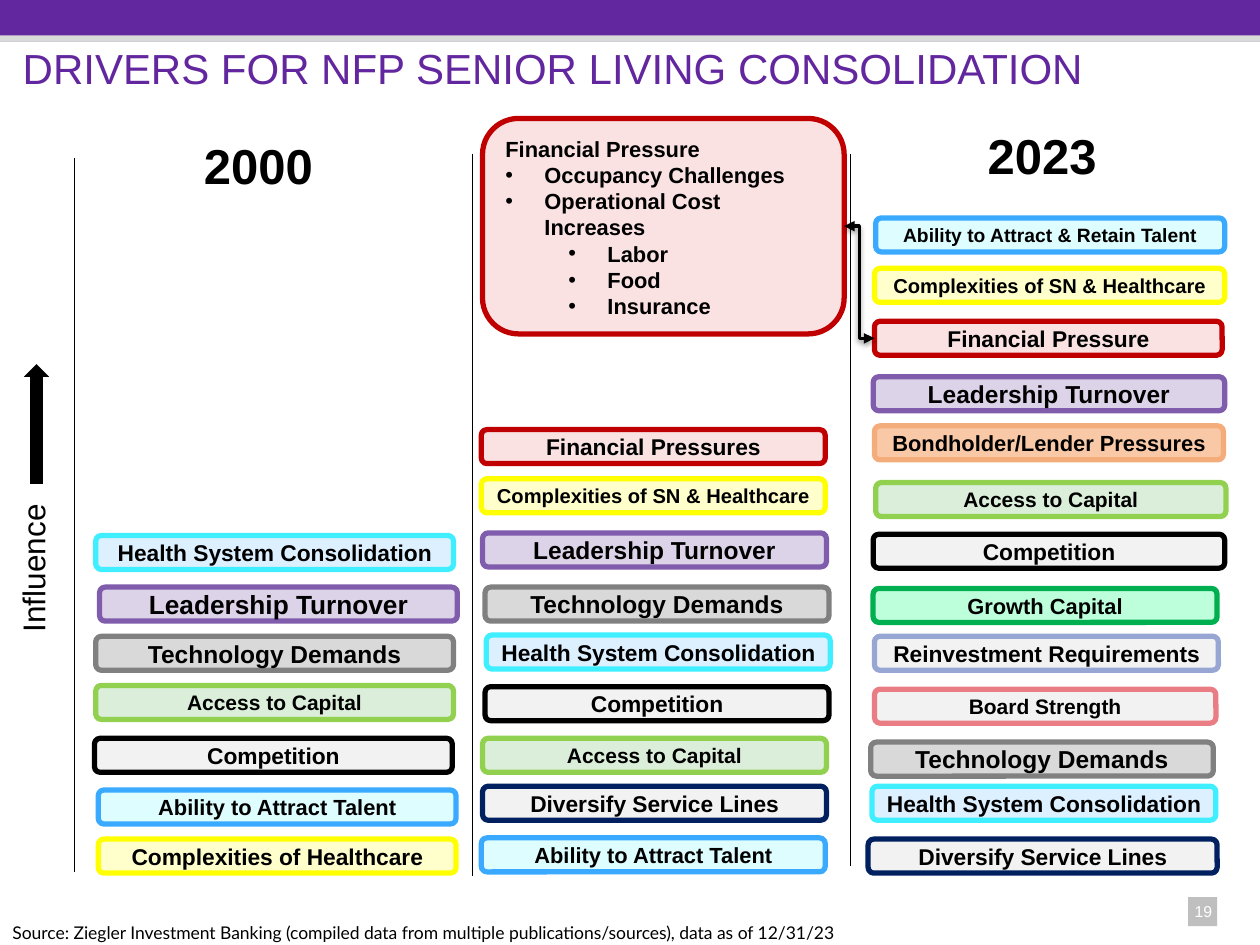
import pptx
import pptx.dml.color
import pptx.enum.shapes
import pptx.enum.text
import pptx.oxml
import pptx.oxml.ns
import pptx.oxml.xmlchemy
import pptx.util
from dataclasses import dataclass

Inches = pptx.util.Inches
Pt = pptx.util.Pt
SHAPE = pptx.enum.shapes.MSO_SHAPE
CONNECTOR = pptx.enum.shapes.MSO_CONNECTOR
ALIGN = pptx.enum.text.PP_ALIGN
ANCHOR = pptx.enum.text.MSO_ANCHOR


@dataclass(frozen=True)
class Theme:
    font: str = "Arial"
    source_font: str = "Lato"
    purple: str = "62269E"
    black: str = "000000"
    white: str = "FFFFFF"
    rule: str = "D9D9D9"
    badge: str = "BFBFBF"
    red_fill: str = "FAE2E3"
    red_line: str = "C00000"
    title: float = 24
    year: float = 28
    axis: float = 18
    callout: float = 12.5
    source: float = 10
    page: float = 9


THEME = Theme()

DRIVERS = {
    "Ability to Attract & Retain Talent": ("DDFDFF", "39AAFF", 11),
    "Ability to Attract Talent": ("DDFDFF", "39AAFF", 12.5),
    "Access to Capital": ("DAEEDA", "92D050", 12),
    "Board Strength": ("F2F2F2", "EA7D83", 12),
    "Bondholder/Lender Pressures": ("F8C8A7", "F4AC7B", 12.5),
    "Competition": ("F2F2F2", THEME.black, 13),
    "Complexities of Healthcare": ("FFFFCC", "FFFF00", 13),
    "Complexities of SN & Healthcare": ("FFFFCC", "FFFF00", 11.5),
    "Diversify Service Lines": ("F2F2F2", "002060", 13),
    "Financial Pressure": (THEME.red_fill, THEME.red_line, 13),
    "Financial Pressures": (THEME.red_fill, THEME.red_line, 13),
    "Growth Capital": ("BDFFDB", "00B050", 12.5),
    "Health System Consolidation": ("DDF0FF", "3FEFFF", 13),
    "Leadership Turnover": ("DDD3E9", "805CAC", 14),
    "Reinvestment Requirements": ("F2F2F2", "98A6D4", 13),
    "Technology Demands": ("D9D9D9", "808080", 14),
}

EARLY_BARS = [
    ("Health System Consolidation", 0.76, 4.25, 2.84),
    ("Leadership Turnover", 0.79, 4.66, 2.84, 15),
    ("Technology Demands", 0.76, 5.05, 2.84),
    ("Access to Capital", 0.76, 5.44, 2.84),
    ("Competition", 0.75, 5.86, 2.84),
    ("Ability to Attract Talent", 0.78, 6.27, 2.84),
    ("Complexities of Healthcare", 0.78, 6.66, 2.84),
]
MIDDLE_BARS = [
    ("Financial Pressures", 3.82, 3.41, 2.73),
    ("Complexities of SN & Healthcare", 3.82, 3.8, 2.73),
    ("Leadership Turnover", 3.83, 4.23, 2.73),
    ("Technology Demands", 3.85, 4.66, 2.73),
    ("Health System Consolidation", 3.86, 5.04, 2.73),
    ("Competition", 3.85, 5.45, 2.73),
    ("Access to Capital", 3.83, 5.86, 2.73),
    ("Diversify Service Lines", 3.83, 6.24, 2.73),
    ("Ability to Attract Talent", 3.82, 6.65, 2.73),
]
LATE_BARS = [
    ("Ability to Attract & Retain Talent", 6.95, 1.73, 2.77),
    ("Complexities of SN & Healthcare", 6.94, 2.13, 2.78),
    ("Financial Pressure", 6.94, 2.55, 2.76),
    ("Leadership Turnover", 6.93, 2.99, 2.79),
    ("Bondholder/Lender Pressures", 6.94, 3.38, 2.77),
    ("Access to Capital", 6.95, 3.83, 2.78),
    ("Competition", 6.93, 4.24, 2.79),
    ("Growth Capital", 6.93, 4.67, 2.73),
    ("Reinvestment Requirements", 6.94, 5.05, 2.73),
    ("Board Strength", 6.94, 5.47, 2.71),
    ("Technology Demands", 6.91, 5.89, 2.72),
    ("Health System Consolidation", 6.92, 6.24, 2.73),
    ("Diversify Service Lines", 6.89, 6.66, 2.77),
]
CALLOUT_LINES = [
    ("Financial Pressure", None),
    ("Occupancy Challenges", 0),
    ("Operational Cost Increases", 0),
    ("Labor", 1),
    ("Food", 1),
    ("Insurance", 1),
]


def color(value):
    return pptx.dml.color.RGBColor.from_string(value)


def apply(target, values):
    for name, value in values.items():
        setattr(target, name, value)


def append_element(parent, tag, name, value):
    element = pptx.oxml.xmlchemy.OxmlElement(tag)
    element.set(name, value)
    parent.append(element)


def write(paragraph, text, size, fill=THEME.black, bold=False, font=THEME.font, align=ALIGN.CENTER):
    paragraph.alignment = align
    run = paragraph.add_run()
    run.text = text
    apply(run.font, {"name": font, "size": Pt(size), "bold": bold})
    run.font.color.rgb = color(fill)


def add_block(slide, kind, box, fill, line=None):
    shape = slide.shapes.add_shape(kind, *map(Inches, box))
    shape.shadow.inherit = False
    shape.fill.solid()
    shape.fill.fore_color.rgb = color(fill)
    if line:
        shape.line.color.rgb = color(line)
        shape.line.width = Pt(3)
    else:
        shape.line.fill.background()
    return shape


def add_label(slide, box, text, size, wrap=False, **style):
    shape = slide.shapes.add_textbox(*map(Inches, box))
    shape.text_frame.word_wrap = wrap
    write(shape.text_frame.paragraphs[0], text, size, **style)


def add_bar(slide, name, left, top, width, size=None):
    fill, line, usual_size = DRIVERS[name]
    bar = add_block(slide, SHAPE.ROUNDED_RECTANGLE, (left, top, width, 0.27), fill, line)
    apply(bar.text_frame, {"word_wrap": True, "vertical_anchor": ANCHOR.MIDDLE,
                           "margin_left": Inches(0.05), "margin_right": Inches(0.05)})
    write(bar.text_frame.paragraphs[0], name, size or usual_size, bold=True)
    return bar


def add_bullet(paragraph, level):
    paragraph.level = level
    properties = paragraph._p.get_or_add_pPr()
    properties.set("marL", str(Inches(0.31 + 0.5 * level)))
    properties.set("indent", str(Inches(-0.31)))
    append_element(properties, "a:buFont", "typeface", THEME.font)
    append_element(properties, "a:buChar", "char", "•")


def add_callout(slide):
    callout = add_block(slide, SHAPE.ROUNDED_RECTANGLE, (3.83, 0.94, 2.87, 1.71),
                        THEME.red_fill, THEME.red_line)
    frame = callout.text_frame
    apply(frame, {"word_wrap": True, "vertical_anchor": ANCHOR.TOP})
    for index, (text, level) in enumerate(CALLOUT_LINES):
        paragraph = frame.add_paragraph() if index else frame.paragraphs[0]
        if level is not None:
            add_bullet(paragraph, level)
        write(paragraph, text, THEME.callout, bold=True, align=ALIGN.LEFT)
    return callout


def add_line(slide, kind, start, end, width):
    connector = slide.shapes.add_connector(kind, *map(Inches, start + end))
    connector.line.color.rgb = color(THEME.black)
    connector.line.width = Pt(width)
    effects = pptx.oxml.xmlchemy.OxmlElement("a:effectLst")
    connector._element.spPr.append(effects)
    return connector, effects


def join(slide, callout, bar):
    connector, effects = add_line(slide, CONNECTOR.ELBOW, (6.7, 1.79), (6.94, 2.68), 2)
    connector.begin_connect(callout, 3)
    connector.end_connect(bar, 1)
    for tag in ("a:headEnd", "a:tailEnd"):
        append_element(connector.line._get_or_add_ln(), tag, "type", "triangle")
    effects.append(pptx.oxml.parse_xml(
        f'<a:outerShdw {pptx.oxml.ns.nsdecls("a")} blurRad="40000" dist="20000" dir="5400000" '
        f'rotWithShape="0"><a:srgbClr val="{THEME.black}"><a:alpha val="38000"/></a:srgbClr></a:outerShdw>'))


def add_title(slide, text):
    title = slide.shapes.title
    apply(title, {"left": Inches(0.08), "top": Inches(0.25),
                  "width": Inches(9.67), "height": Inches(0.83)})
    apply(title.text_frame, {"vertical_anchor": ANCHOR.BOTTOM, "margin_bottom": Inches(0.34),
                             "auto_size": pptx.enum.text.MSO_AUTO_SIZE.NONE})
    write(title.text_frame.paragraphs[0], text, THEME.title, THEME.purple, align=ALIGN.LEFT)


def add_influence_axis(slide):
    label = add_block(slide, SHAPE.RECTANGLE, (-0.37, 4.31, 1.26, 0.4), THEME.white)
    label.rotation = 270
    label.text_frame.word_wrap = False
    write(label.text_frame.paragraphs[0], "Influence", THEME.axis)
    add_block(slide, SHAPE.UP_ARROW, (0.19, 2.89, 0.2, 0.95), THEME.black)


def main():
    presentation = pptx.Presentation()
    apply(presentation, {"slide_width": Inches(10), "slide_height": Inches(7.5)})
    slide = presentation.slides.add_slide(presentation.slide_layouts[5])
    add_block(slide, SHAPE.RECTANGLE, (9.43, 7.12, 0.23, 0.23), THEME.badge)
    add_label(slide, (9.09, 7.11, 0.92, 0.25), "19", THEME.page, fill=THEME.white, wrap=True)
    add_block(slide, SHAPE.RECTANGLE, (0, 0, 10, 0.33), THEME.purple)
    add_block(slide, SHAPE.RECTANGLE, (0, 0.28, 10, 0.05), THEME.rule)
    add_title(slide, "DRIVERS FOR NFP SENIOR LIVING CONSOLIDATION")
    for year, left, top in (("2000", 1.51, 1.03), ("2023", 7.73, 0.95)):
        add_label(slide, (left, top, 1.08, 0.57), year, THEME.year, bold=True)
    add_influence_axis(slide)
    for x, top, bottom in ((0.59, 1.25, 6.92), (3.75, 1.22, 6.95), (6.75, 1.22, 6.87)):
        add_line(slide, CONNECTOR.STRAIGHT, (x, top), (x, bottom), 0.75)
    bars = {bar[0]: add_bar(slide, *bar) for bar in EARLY_BARS + MIDDLE_BARS + LATE_BARS}
    join(slide, add_callout(slide), bars["Financial Pressure"])
    add_label(slide, (0, 7.27, 8.08, 0.27),
              "Source: Ziegler Investment Banking (compiled data from multiple publications/sources), "
              "data as of 12/31/23", THEME.source, wrap=True, font=THEME.source_font, align=ALIGN.LEFT)
    presentation.save("out.pptx")


if __name__ == "__main__":
    main()
